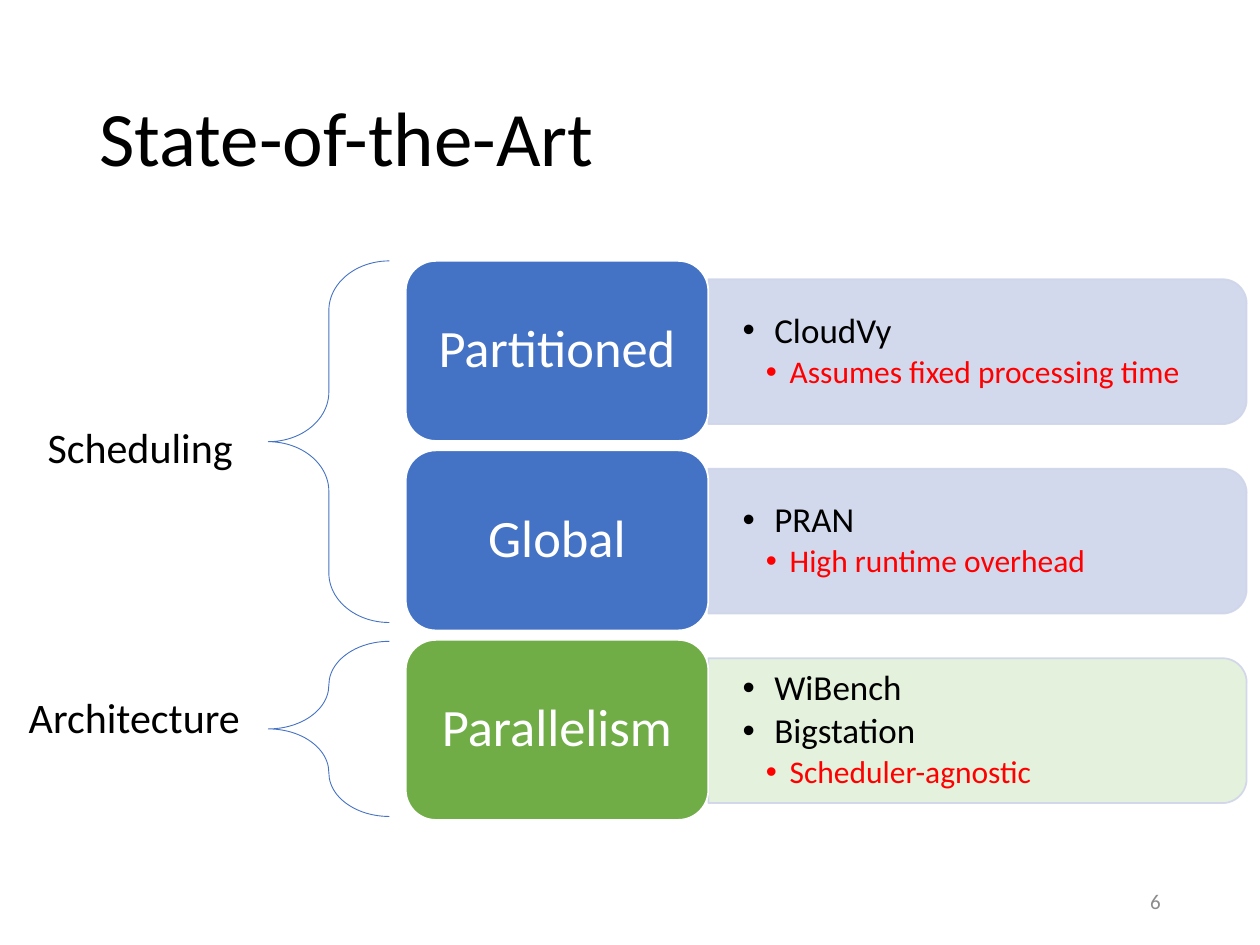
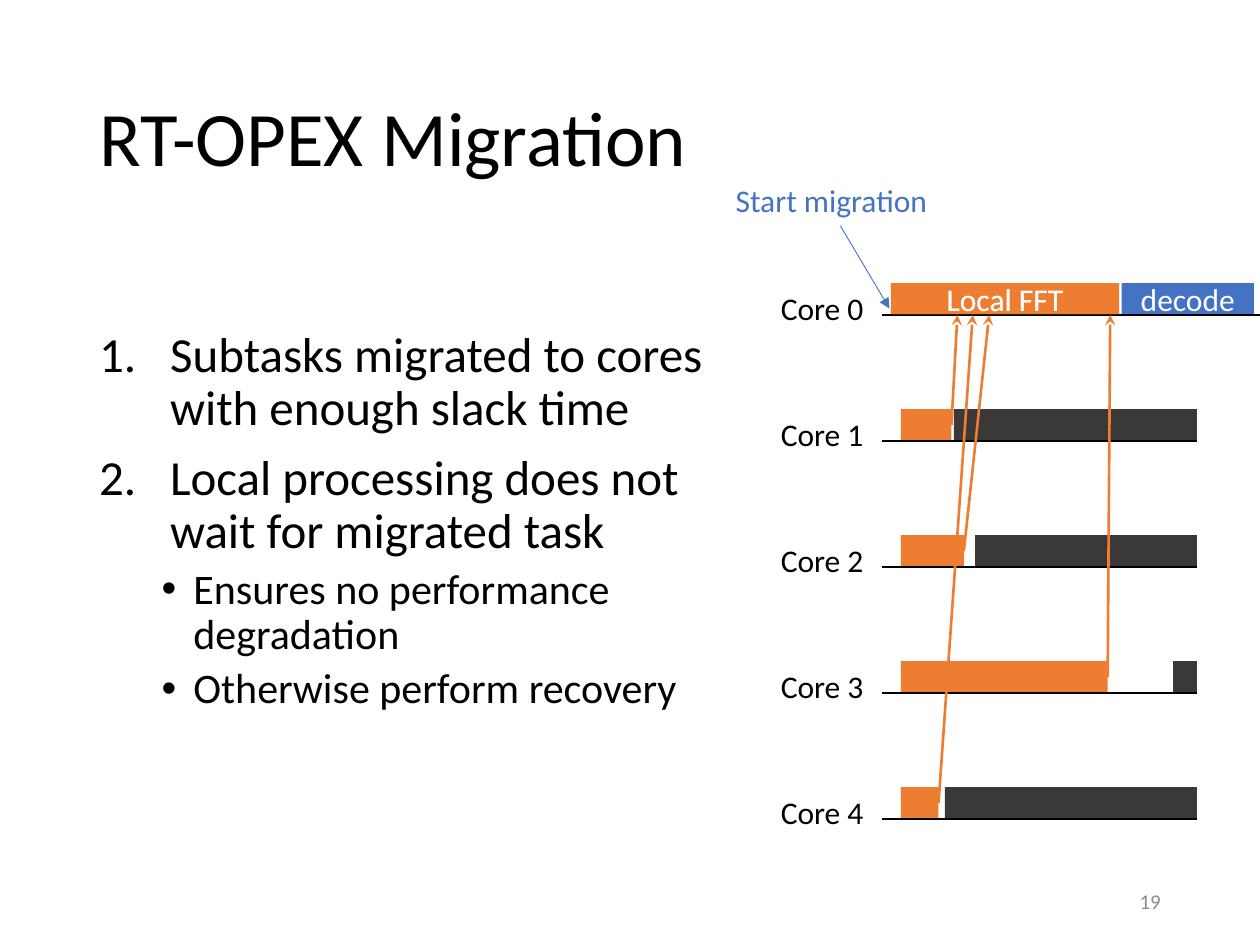
from dataclasses import dataclass

from lxml import etree
from pptx import Presentation
from pptx import util as u
from pptx.dml.color import RGBColor
from pptx.enum import shapes, text
from pptx.oxml import ns

Cm, Pt = u.Cm, u.Pt
KIND = shapes.MSO_SHAPE
ALIGN = text.PP_ALIGN
MIDDLE = text.MSO_ANCHOR.MIDDLE


@dataclass(frozen=True)
class Theme:
    font: str = "Calibri"
    ink: str = "000000"
    white: str = "FFFFFF"
    grey: str = "8C8C8C"
    blue: str = "4472C4"
    pale_blue: str = "CFD5EA"
    green: str = "70AD47"
    pale_green: str = "E2F0D9"
    orange: str = "ED7D31"
    dark: str = "3B3838"
    red: str = "FF0000"
    title: int = 44
    category: int = 30
    body: int = 28
    sub_body: int = 24
    system: int = 20
    label: int = 18
    number: int = 12


@dataclass(frozen=True)
class Para:
    """One paragraph; margin and hanging indent are in cm."""
    words: str
    size: int
    color: str = Theme.ink
    align: ALIGN = ALIGN.LEFT
    bullet: str = ""
    margin: float = 0
    hang: float = 0
    before: float = 0
    after: float = 0
    spacing: float = 1.0


class Deck:
    def __init__(self, theme):
        self.theme = theme
        self.prs = Presentation()
        self.prs.slide_width, self.prs.slide_height = Cm(25.4), Cm(19.05)
        self.slide = None

    def new_slide(self, title, number):
        """Start a slide with the shared title and page number."""
        t = self.theme
        self.slide = self.prs.slides.add_slide(self.prs.slide_layouts[5])
        heading = self.slide.shapes.title
        heading.left, heading.top = Cm(1.75), Cm(1.02)
        heading.width, heading.height = Cm(21.9), Cm(3.68)
        self.set_text(heading.text_frame, [Para(title, t.title, spacing=0.9)], MIDDLE)
        self.label(17.93, 17.65, 5.72, 1.02,
                   [Para(str(number), t.number, t.grey, ALIGN.RIGHT)], MIDDLE)

    def set_text(self, frame, paras, anchor=text.MSO_ANCHOR.TOP):
        frame.word_wrap = True
        frame.vertical_anchor = anchor
        for i, para in enumerate(paras):
            p = frame.add_paragraph() if i else frame.paragraphs[0]
            p.text = para.words
            p.alignment = para.align
            p.line_spacing = para.spacing
            p.space_before, p.space_after = Pt(para.before), Pt(para.after)
            if para.bullet:
                self.bullet(p, para)
            p.font.name, p.font.size = self.theme.font, Pt(para.size)
            p.font.color.rgb = RGBColor.from_string(para.color)

    @staticmethod
    def bullet(p, para):
        props = p._p.get_or_add_pPr()
        props.set("marL", str(Cm(para.margin)))
        props.set("indent", str(-Cm(para.hang)))
        if para.bullet == "1.":
            etree.SubElement(props, ns.qn("a:buFont"), typeface="+mj-lt")
            etree.SubElement(props, ns.qn("a:buAutoNum"), type="arabicPeriod")
        else:
            etree.SubElement(props, ns.qn("a:buFont"), typeface="Arial")
            etree.SubElement(props, ns.qn("a:buChar"), char=para.bullet)

    def label(self, x, y, w, h, paras, anchor=text.MSO_ANCHOR.TOP, inset=None):
        box = self.slide.shapes.add_textbox(Cm(x), Cm(y), Cm(w), Cm(h))
        frame = box.text_frame
        if inset:
            frame.margin_left = frame.margin_right = Cm(inset[0])
            frame.margin_top = frame.margin_bottom = Cm(inset[1])
        self.set_text(frame, paras, anchor)

    def shape(self, kind, x, y, w, h, fill=None, line=None, weight=1.0,
              alpha=100, para=None):
        item = self.slide.shapes.add_shape(kind, Cm(x), Cm(y), Cm(w), Cm(h))
        item.shadow.inherit = False
        if fill:
            item.fill.solid()
            item.fill.fore_color.rgb = RGBColor.from_string(fill)
        else:
            item.fill.background()
        if line:
            item.line.color.rgb = RGBColor.from_string(line)
            item.line.width = Pt(weight)
        else:
            item.line.fill.background()
        if alpha < 100:
            for color in item._element.spPr.iter(ns.qn("a:srgbClr")):
                etree.SubElement(color, ns.qn("a:alpha"), val=str(alpha * 1000))
        if para:
            self.set_text(item.text_frame, [para], MIDDLE)
        return item

    def bar(self, x, y, w, fill, **more):
        return self.shape(KIND.RECTANGLE, x, y, w, 0.64, fill, **more)

    def line(self, start, end, color, weight, head=None):
        link = self.slide.shapes.add_connector(
            shapes.MSO_CONNECTOR.STRAIGHT, *map(Cm, start + end))
        link.line.color.rgb = RGBColor.from_string(color)
        link.line.width = Pt(weight)
        outline = link._element.spPr.find(ns.qn("a:ln"))
        if head:
            etree.SubElement(outline, ns.qn("a:tailEnd"), type=head)
        etree.SubElement(link._element.spPr, ns.qn("a:effectLst"))


def state_of_the_art(deck):
    t = deck.theme
    deck.new_slide("State-of-the-Art", 6)

    # Categories with their known systems and drawbacks
    categories = [
        ("Partitioned", t.blue, t.pale_blue, ["CloudVy"], "Assumes fixed processing time"),
        ("Global", t.blue, t.pale_blue, ["PRAN"], "High runtime overhead"),
        ("Parallelism", t.green, t.pale_green, ["WiBench", "Bigstation"], "Scheduler-agnostic"),
    ]
    panel_x, panel_w, panel_h = 14.28, 10.85, 2.92
    for row, (name, strong, pale, systems, drawback) in enumerate(categories):
        top = 5.26 + 3.82 * row
        middle = top + 1.83
        # The panel is a tall shape turned so its round corners face right
        panel = deck.shape(KIND.ROUND_2_SAME_RECTANGLE,
                           panel_x + (panel_w - panel_h) / 2, middle - panel_w / 2,
                           panel_h, panel_w, pale, t.pale_blue, alpha=90)
        panel.rotation = 90
        points = [Para(s, t.system, bullet="•", margin=0.64, hang=0.64,
                       after=3, spacing=0.9) for s in systems]
        points.append(Para(drawback, t.label, t.red, bullet="•", margin=0.95,
                           hang=0.48, after=2.7, spacing=0.9))
        deck.label(panel_x, middle - 1.31, 10.7, 2.62, points, MIDDLE, (0.69, 0.36))
        deck.shape(KIND.ROUNDED_RECTANGLE, 8.18, top, 6.1, 3.63, strong, t.white,
                   para=Para(name, t.category, t.white, ALIGN.CENTER, spacing=0.9))

    # Braces and the two families
    for family, x, y, brace_y, brace_h in [("Scheduling", 0.71, 8.38, 5.26, 7.29),
                                           ("Architecture", 0.33, 13.82, 12.93, 3.53)]:
        brace = deck.shape(KIND.LEFT_BRACE, 5.41, brace_y, 2.44, brace_h,
                           line=t.blue, weight=0.5)
        brace.adjustments[0] = 0.41
        deck.label(x, y, 5.41, 1.27, [Para(family, t.sub_body)])


def migration(deck):
    t = deck.theme
    deck.new_slide("RT-OPEX Migration", 19)

    # Rules of migration
    rule = dict(size=t.body, bullet="1.", margin=1.43, hang=1.43, before=10, spacing=0.9)
    detail = dict(size=t.sub_body, bullet="•", margin=1.9, hang=0.64, before=5, spacing=0.9)
    deck.label(1.75, 6.53, 13.59, 10.6, [
        Para("Subtasks migrated to cores with enough slack time", **rule),
        Para("Local processing does not wait for migrated task", **rule),
        Para("Ensures no performance degradation", **detail),
        Para("Otherwise perform recovery", **detail),
    ])

    # Core timelines
    axis_x, axis_end, first_axis, pitch = 17.78, 24.13, 6.35, 2.54
    bar_x, bar_h = 18.16, 0.64
    local = Para("Local FFT", t.label, t.white, ALIGN.CENTER)
    local_bar = (17.96, first_axis - bar_h, 4.6, t.orange)
    deck.bar(*local_bar, para=local)
    deck.bar(22.61, first_axis - bar_h, 2.67, t.blue,
             para=Para("decode", t.label, t.white, ALIGN.CENTER))

    # Per core: migrated bar width, start of its own work, where the result returns
    cores = [(1.02, 19.23, 19.3), (1.27, 19.66, 19.94),
             (4.17, 23.65, 22.38), (0.76, 19.05, 19.61)]
    for core in range(len(cores) + 1):
        axis = first_axis + pitch * core
        if core:
            migrated, busy, _ = cores[core - 1]
            deck.bar(bar_x, axis - bar_h, migrated, t.orange)
            deck.bar(busy, axis - bar_h, axis_end - busy, t.dark)
        deck.line((axis_x, axis), (axis_end if core else 25.4, axis), t.ink, 1.25)
        deck.label(15.49, axis - bar_h, 2.44, 1.02, [Para(f"Core {core}", t.label)])

    # Start marker and returning results
    deck.line((16.94, 4.55), (17.93, 6.22), t.blue, 0.5, "triangle")
    deck.label(14.58, 3.53, 4.72, 1.02, [Para("Start migration", t.label, t.blue)])
    for core, (migrated, _, target) in enumerate(cores, 1):
        deck.line((bar_x + migrated, first_axis + pitch * core - bar_h / 2),
                  (target, first_axis), t.orange, 1.5, "stealth")

    # Translucent cover over the local work
    deck.bar(*local_bar, alpha=20, para=local)


def main():
    deck = Deck(Theme())
    state_of_the_art(deck)
    migration(deck)
    deck.prs.save("out.pptx")


if __name__ == "__main__":
    main()
